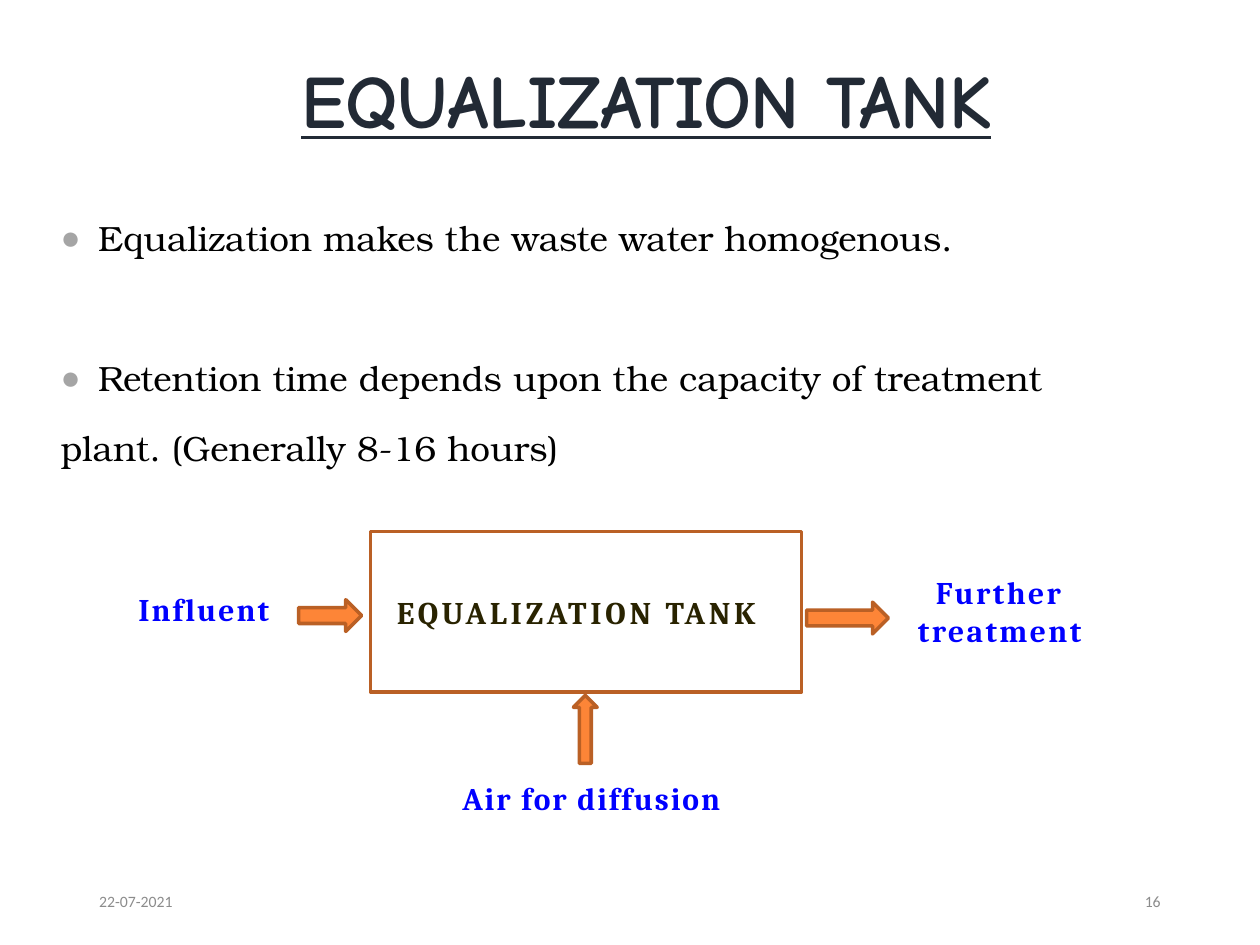
from dataclasses import dataclass

from lxml import etree
from pptx import Presentation
from pptx.dml.color import RGBColor
from pptx.enum.shapes import MSO_SHAPE
from pptx.enum.text import MSO_ANCHOR, MSO_AUTO_SIZE, PP_ALIGN
from pptx.oxml.ns import qn
from pptx.util import Cm, Pt

RECTANGLE = MSO_SHAPE.RECTANGLE
RIGHT_ARROW, UP_ARROW = MSO_SHAPE.RIGHT_ARROW, MSO_SHAPE.UP_ARROW
LEFT, CENTER, RIGHT = PP_ALIGN.LEFT, PP_ALIGN.CENTER, PP_ALIGN.RIGHT
TOP, MIDDLE = MSO_ANCHOR.TOP, MSO_ANCHOR.MIDDLE
NO_AUTOFIT = MSO_AUTO_SIZE.NONE

COLORS = {
    "title": "222A35",
    "body": "000000",
    "bullet": "A5A5A5",
    "tank": "292300",
    "label": "0000FF",
    "footer": "8C8C8C",
    "arrow": "FD8537",
    "outline": "BA6025",
}


@dataclass(frozen=True)
class Place:
    """Left, top, width and height in centimetres."""
    left: float
    top: float
    width: float
    height: float

    def lengths(self) -> tuple:
        return Cm(self.left), Cm(self.top), Cm(self.width), Cm(self.height)


@dataclass(frozen=True)
class Style:
    font: str
    size: float
    color: str
    bold: bool = False
    underline: bool = False


@dataclass(frozen=True)
class Label:
    text: str
    place: Place
    style: Style
    align: PP_ALIGN
    anchor: MSO_ANCHOR = TOP
    tracking: float = 0
    side_margin: float = 0


@dataclass(frozen=True)
class Arrow:
    kind: MSO_SHAPE
    place: Place


@dataclass(frozen=True)
class Line:
    text: str
    space_before: float
    bulleted: bool


TITLE_STYLE = Style("Comic Neue", 43, "title", bold=True, underline=True)
BODY_STYLE = Style("TeX Gyre Bonum", 20, "body")
TANK_STYLE = Style("Cambria", 18, "tank", bold=True)
LABEL_STYLE = Style("Cambria", 18, "label", bold=True)
FOOTER_STYLE = Style("Calibri", 9, "footer")

TITLE_PLACE = Place(3.15, 1.24, 19.76, 1.7)
BODY_PLACE = Place(1.22, 3.94, 23.62, 7.52)
TANK_PLACE = Place(7.47, 10.72, 8.69, 3.23)

BODY_LINES = [
    Line("Equalization makes the waste water homogenous.", 4, True),
    Line("Retention time depends upon the capacity of treatment", 44, True),
    Line("plant. (Generally 8-16 hours)", 4, False),
]
ARROWS = [
    Arrow(RIGHT_ARROW, Place(6.02, 12.09, 1.27, 0.64)),
    Arrow(UP_ARROW, Place(11.56, 14.02, 0.48, 1.37)),
    Arrow(RIGHT_ARROW, Place(16.26, 12.14, 1.65, 0.64)),
]
LABELS = [
    Label("Influent", Place(1.85, 11.89, 4.52, 0.81), LABEL_STYLE, CENTER, tracking=1.2),
    Label("Air for diffusion", Place(9.32, 15.7, 5.41, 0.84), LABEL_STYLE, LEFT, tracking=1.1),
    Label("Further treatment", Place(17.4, 11.56, 5.51, 1.57), LABEL_STYLE, CENTER, tracking=1.4),
    Label("22-07-2021", Place(1.75, 17.65, 5.72, 1.02), FOOTER_STYLE, LEFT, MIDDLE, side_margin=0.25),
    Label("16", Place(17.93, 17.65, 5.72, 1.02), FOOTER_STYLE, RIGHT, MIDDLE, side_margin=0.25),
]


def rgb(name: str) -> RGBColor:
    return RGBColor.from_string(COLORS[name])


def move(shape, place: Place) -> None:
    shape.left, shape.top, shape.width, shape.height = place.lengths()


def prepare_frame(frame, anchor, side_margin: float = 0) -> None:
    frame.word_wrap = True
    frame.auto_size = NO_AUTOFIT
    frame.vertical_anchor = anchor
    frame.margin_left = frame.margin_right = Cm(side_margin)
    frame.margin_top = frame.margin_bottom = 0


def write(para, text: str, style: Style, align, tracking: float = 0) -> None:
    """Fill a paragraph with one run; tracking is letter spacing in points."""
    span = para.add_run()
    span.text = text
    if tracking:
        span._r.get_or_add_rPr().set("spc", str(round(tracking * 100)))
    para.alignment = align
    font = para.font
    font.name, font.size = style.font, Pt(style.size)
    font.bold, font.underline = style.bold, style.underline
    font.color.rgb = rgb(style.color)


def set_bullet(para, bulleted: bool) -> None:
    properties = para._p.get_or_add_pPr()
    indent = Cm(0.76) if bulleted else 0
    properties.set("marL", str(indent))
    properties.set("indent", str(-indent))
    if not bulleted:
        etree.SubElement(properties, qn("a:buNone"))
        return
    color = etree.SubElement(properties, qn("a:buClr"))
    etree.SubElement(color, qn("a:srgbClr"), val=COLORS["bullet"])
    etree.SubElement(properties, qn("a:buSzPct"), val="95000")
    etree.SubElement(properties, qn("a:buChar"), char="●")


def fill_title(title) -> None:
    move(title, TITLE_PLACE)
    prepare_frame(title.text_frame, MIDDLE)
    para = title.text_frame.paragraphs[0]
    para.line_spacing = 0.9
    write(para, "EQUALIZATION TANK", TITLE_STYLE, CENTER, -0.1)


def fill_body(body) -> None:
    move(body, BODY_PLACE)
    frame = body.text_frame
    prepare_frame(frame, TOP)
    for index, line in enumerate(BODY_LINES):
        para = frame.add_paragraph() if index else frame.paragraphs[0]
        set_bullet(para, line.bulleted)
        para.line_spacing = 1.5
        para.space_before = Pt(line.space_before)
        write(para, line.text, BODY_STYLE, LEFT)


def add_outlined(slide, kind, place: Place):
    shape = slide.shapes.add_shape(kind, *place.lengths())
    shape.shadow.inherit = False
    shape.line.color.rgb = rgb("outline")
    shape.line.width = Pt(2)
    return shape


def add_tank(slide) -> None:
    tank = add_outlined(slide, RECTANGLE, TANK_PLACE)
    tank.fill.background()
    prepare_frame(tank.text_frame, MIDDLE, 0.53)
    write(tank.text_frame.paragraphs[0], "EQUALIZATION TANK", TANK_STYLE, LEFT, 2.15)


def add_arrow(slide, arrow: Arrow) -> None:
    shape = add_outlined(slide, arrow.kind, arrow.place)
    shape.fill.solid()
    shape.fill.fore_color.rgb = rgb("arrow")


def add_label(slide, label: Label) -> None:
    box = slide.shapes.add_textbox(*label.place.lengths())
    prepare_frame(box.text_frame, label.anchor, label.side_margin)
    write(box.text_frame.paragraphs[0], label.text, label.style, label.align, label.tracking)


def main() -> None:
    deck = Presentation()
    deck.slide_width, deck.slide_height = Cm(25.4), Cm(19.05)
    slide = deck.slides.add_slide(deck.slide_layouts[1])
    fill_title(slide.shapes.title)
    fill_body(slide.placeholders[1])
    add_tank(slide)
    for arrow in ARROWS:
        add_arrow(slide, arrow)
    for label in LABELS:
        add_label(slide, label)
    deck.save("out.pptx")


if __name__ == "__main__":
    main()
